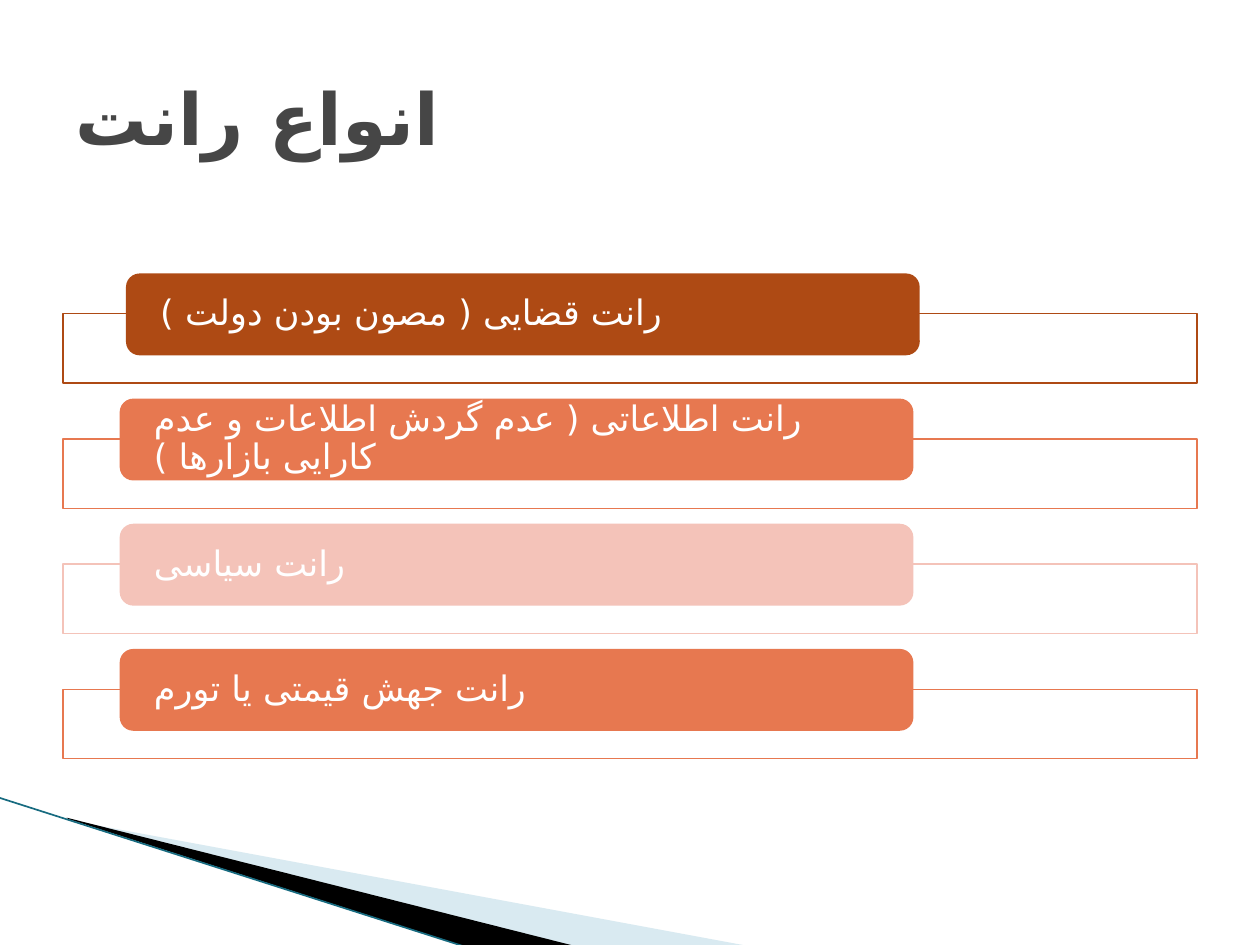
from dataclasses import dataclass

from lxml.etree import SubElement
from pptx import Presentation
from pptx.dml.color import RGBColor
from pptx.enum.shapes import MSO_CONNECTOR as CONNECTOR, MSO_SHAPE as SHAPE
from pptx.enum.text import MSO_ANCHOR as ANCHOR, PP_ALIGN as ALIGN
from pptx.oxml.ns import qn
from pptx.util import Inches, Pt


@dataclass(frozen=True)
class Theme:
    font: str = "DejaVu Sans Mono"
    arabic_font: str = "DejaVu Sans"
    title_size: float = 41
    label_size: float = 20
    title: str = "464646"
    white: str = "FFFFFF"
    black: str = "000000"
    rust: str = "AE4A14"
    orange: str = "E77850"
    pink: str = "F4C3B9"
    pale_blue: str = "A0CBDC"
    edge_teal: str = "176B80"


def write_text(frame, text, *, font, arabic_font, size, color, bold=False,
               rtl=False, inset=(0.1, 0.05), spacing=None):
    """Fill a frame with one left-aligned, vertically centred paragraph."""
    frame.word_wrap = True
    frame.vertical_anchor = ANCHOR.MIDDLE
    frame.margin_left = frame.margin_right = Inches(inset[0])
    frame.margin_top = frame.margin_bottom = Inches(inset[1])
    paragraph = frame.paragraphs[0]
    paragraph.alignment = ALIGN.LEFT
    paragraph.line_spacing = spacing
    if rtl:
        paragraph._p.get_or_add_pPr().set("rtl", "1")
    run = paragraph.add_run()
    run.text = text
    run.font.size = Pt(size)
    run.font.bold = bold
    run.font.name = font
    run.font.color.rgb = RGBColor.from_string(color)
    # Arabic script takes its typeface from the complex-script entry
    SubElement(run._r.get_or_add_rPr(), qn("a:cs")).set("typeface", arabic_font)


class SlideBuilder:
    def __init__(self, slide, theme):
        self.slide = slide
        self.theme = theme
        self.fonts = {"font": theme.font, "arabic_font": theme.arabic_font}

    def paint(self, shape, fill, alpha=None, line=None):
        shape.shadow.inherit = False
        shape.fill.solid()
        shape.fill.fore_color.rgb = RGBColor.from_string(fill)
        if alpha is not None:
            color = shape.fill._xPr.find(qn("a:solidFill"))[0]
            SubElement(color, qn("a:alpha")).set("val", str(alpha * 1000))
        if line:
            shape.line.color.rgb = RGBColor.from_string(line)
            shape.line.width = Pt(0.75)
        else:
            shape.line.fill.background()

    def box(self, kind, left, top, width, height, fill, **look):
        shape = self.slide.shapes.add_shape(
            kind, Inches(left), Inches(top), Inches(width), Inches(height))
        self.paint(shape, fill, **look)
        return shape

    def wedge(self, points, fill, alpha=None):
        start, *rest = [(Inches(x), Inches(y)) for x, y in points]
        outline = self.slide.shapes.build_freeform(*start)
        outline.add_line_segments(rest, close=True)
        self.paint(outline.convert_to_shape(), fill, alpha)

    def line(self, start, end, color, width):
        edge = self.slide.shapes.add_connector(
            CONNECTOR.STRAIGHT, *map(Inches, start + end))
        edge.line.color.rgb = RGBColor.from_string(color)
        edge.line.width = Pt(width)
        SubElement(edge._element.spPr, qn("a:effectLst"))

    def title(self, text):
        heading = self.slide.shapes.add_textbox(
            Inches(0.5), Inches(0.3), Inches(9), Inches(1.25))
        write_text(heading.text_frame, text, **self.fonts,
                   size=self.theme.title_size, color=self.theme.title, bold=True)

    def rent_type(self, top, text, color, label_left, rtl):
        self.box(SHAPE.RECTANGLE, 0.5, top, 9, 0.55, self.theme.white,
                 alpha=90, line=color)
        label = self.box(SHAPE.ROUNDED_RECTANGLE, label_left, top - 0.32,
                         6.3, 0.65, color)
        write_text(label.text_frame, text, **self.fonts,
                   size=self.theme.label_size, color=self.theme.white,
                   rtl=rtl, inset=(0.24, 0), spacing=0.9)


def main():
    theme = Theme()
    deck = Presentation()
    deck.slide_width, deck.slide_height = Inches(10), Inches(7.5)
    page = SlideBuilder(deck.slides.add_slide(deck.slide_layouts[6]), theme)

    # Corner decoration
    page.wedge([(0.55, 6.51), (5.95, 7.51), (4.56, 7.51), (0.55, 6.5)],
               theme.pale_blue, alpha=40)
    page.wedge([(0.53, 6.49), (4.57, 7.51), (3.72, 7.52), (0.54, 6.5)],
               theme.black)
    page.line((-0.01, 6.33), (3.71, 7.52), theme.edge_teal, 0.95)

    # Kinds of rent: text, colour, left edge of the label, right-to-left
    rent_types = [
        ("رانت قضایی ( مصون بودن دولت )", theme.rust, 1, False),
        ("رانت اطلاعاتی ( عدم گردش اطلاعات و عدم کارایی بازارها )",
         theme.orange, 0.95, False),
        ("رانت سیاسی", theme.pink, 0.95, True),
        ("رانت جهش قیمتی یا تورم", theme.orange, 0.95, False),
    ]
    first_top, last_top = 2.49, 5.47
    pitch = (last_top - first_top) / (len(rent_types) - 1)
    for row, rent in enumerate(rent_types):
        page.rent_type(first_top + row * pitch, *rent)

    # Title
    page.title("انواع رانت")

    deck.save("out.pptx")


if __name__ == "__main__":
    main()
